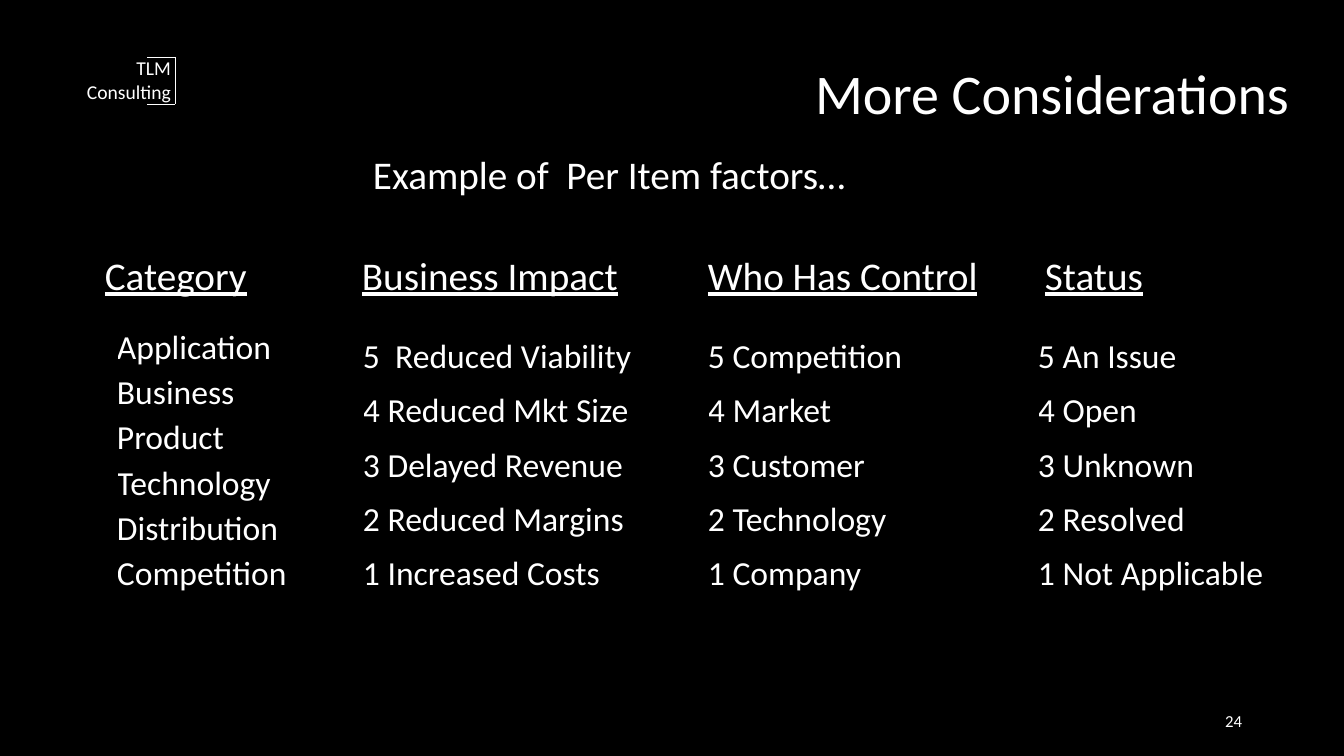
from lxml.etree import SubElement
from pptx import Presentation
from pptx.dml.color import RGBColor
from pptx.enum.shapes import MSO_CONNECTOR
from pptx.enum.text import MSO_ANCHOR as ANCHOR, PP_ALIGN as ALIGN
from pptx.oxml import parse_xml
from pptx.oxml.ns import nsdecls, qn
from pptx.util import Pt

# Content
TITLE = "More Considerations"
SUBTITLE = "Example of  Per Item factors…"
FIRM = ["TLM", "Consulting"]
PAGE = "24"
# heading, heading left, heading width, list left, list width, entries
FACTORS = [
    ("Category", 95, 195, 117, 215,
     ["Application", "Business", "Product", "Technology", "Distribution", "Competition"]),
    ("Business Impact", 352, 316, 363, 383,
     ["5  Reduced Viability", "4 Reduced Mkt Size", "3 Delayed Revenue",
      "2 Reduced Margins", "1 Increased Costs"]),
    ("Who Has Control", 698, 316, 708, 247,
     ["5 Competition", "4 Market", "3 Customer", "2 Technology", "1 Company"]),
    ("Status", 1035, 316, 1038, 240,
     ["5 An Issue", "4 Open", "3 Unknown", "2 Resolved", "1 Not Applicable"]),
]

# Style and layout, in px
FONT, WHITE, BLACK = "Calibri", "FFFFFF", "000000"
NO_GRID = "{2D5ABB26-0587-4C30-8999-92F81FD0307C}"
EMU_PER_PX = 914400 / 100.8
HEADING_TOP, HEADING_HEIGHT = 246, 57
LIST_TOP, LIST_HEIGHT = 323, 272
BRACKET = [(175, 57), (175, 104), 147]  # top corner, bottom corner, left end


def px(length):
    return round(length * EMU_PER_PX)


def color(hex_string):
    return RGBColor.from_string(hex_string)


def write(frame, lines, size, align=ALIGN.LEFT, underline=None):
    frame.text = "\n".join(lines)
    for paragraph in frame.paragraphs:
        paragraph.alignment = align
        for run in paragraph.runs:
            run.font.name = FONT
            run.font.size = Pt(size)
            run.font.color.rgb = color(WHITE)
            run.font.underline = underline


def add_label(lines, box, size, align=ALIGN.LEFT, anchor=ANCHOR.TOP, underline=None):
    frame = slide.shapes.add_textbox(*map(px, box)).text_frame
    frame.word_wrap = True
    frame.vertical_anchor = anchor
    write(frame, lines, size, align, underline)


def add_line(start, end):
    line = slide.shapes.add_connector(MSO_CONNECTOR.STRAIGHT, *map(px, start + end))
    line.line.color.rgb = color(WHITE)
    line.line.width = Pt(0.5)
    SubElement(line._element.spPr, qn("a:effectLst"))


def outline(cell, sides):
    for position, side in enumerate(sides):
        cell._tc.get_or_add_tcPr().insert(position, parse_xml(
            f'<a:ln{side} {nsdecls("a")} w="6350"><a:solidFill>'
            f'<a:srgbClr val="{BLACK}"/></a:solidFill></a:ln{side}>'))


def add_list(entries, left, width):
    box = map(px, (left, LIST_TOP, width, LIST_HEIGHT))
    table = slide.shapes.add_table(len(entries), 1, *box).table
    table.first_row = table.horz_banding = False
    table._tbl.tblPr.find(qn("a:tableStyleId")).text = NO_GRID
    for index, entry in enumerate(entries):
        table.rows[index].height = px(LIST_HEIGHT / len(entries))
        cell = table.cell(index, 0)
        cell.margin_left = cell.margin_right = cell.margin_top = cell.margin_bottom = 0
        cell.vertical_anchor = ANCHOR.BOTTOM
        cell.fill.background()
        write(cell.text_frame, [entry], 24)
        top = ["T"] if index == 0 else []
        bottom = ["B"] if index == len(entries) - 1 else []
        outline(cell, ["L", "R"] + top + bottom)


# Slide with black background
prs = Presentation()
prs.slide_width, prs.slide_height = px(1344), px(756)
slide = prs.slides.add_slide(prs.slide_layouts[0])
slide.background.fill.solid()
slide.background.fill.fore_color.rgb = color(BLACK)
subtitle_holder = slide.placeholders[1]._element
subtitle_holder.getparent().remove(subtitle_holder)

# Firm name in its bracket
add_label(FIRM, (71, 51, 110, 57), 14, ALIGN.RIGHT)
top_corner, bottom_corner, bracket_left = BRACKET
add_line(top_corner, bottom_corner)
for corner in (top_corner, bottom_corner):
    add_line(corner, (bracket_left, corner[1]))

# Title, subtitle and page number
title = slide.shapes.title
title.left, title.top, title.width, title.height = map(px, (371, 44, 928, 88))
title.text_frame.vertical_anchor = ANCHOR.BOTTOM
write(title.text_frame, [TITLE], 40, ALIGN.RIGHT)
title.text_frame.paragraphs[0].line_spacing = 0.9
add_label([SUBTITLE], (363, 145, 520, 57), 28)
add_label([PAGE], (950, 701, 302, 40), 12, ALIGN.RIGHT, ANCHOR.MIDDLE)

# Factor columns
for heading, heading_left, heading_width, list_left, list_width, entries in FACTORS:
    add_label([heading], (heading_left, HEADING_TOP, heading_width, HEADING_HEIGHT),
              28, underline=True)
    add_list(entries, list_left, list_width)

prs.save("out.pptx")
